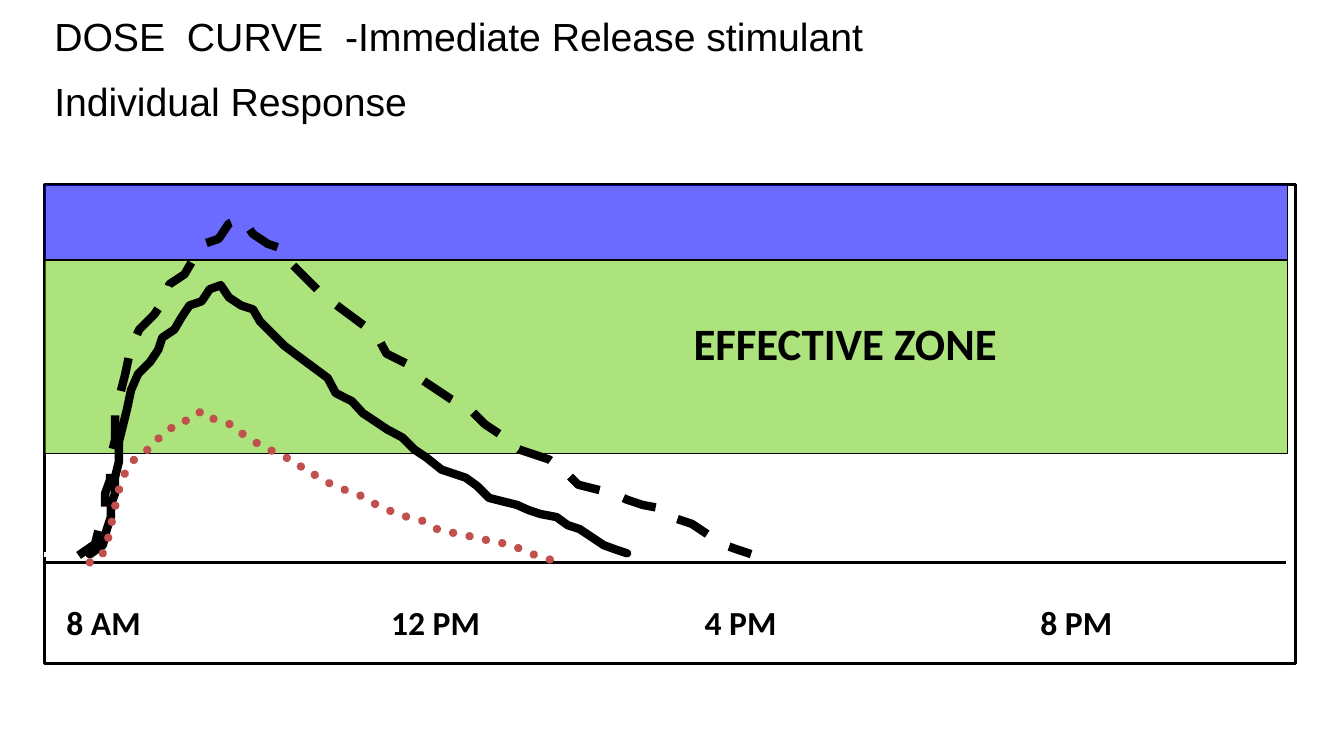
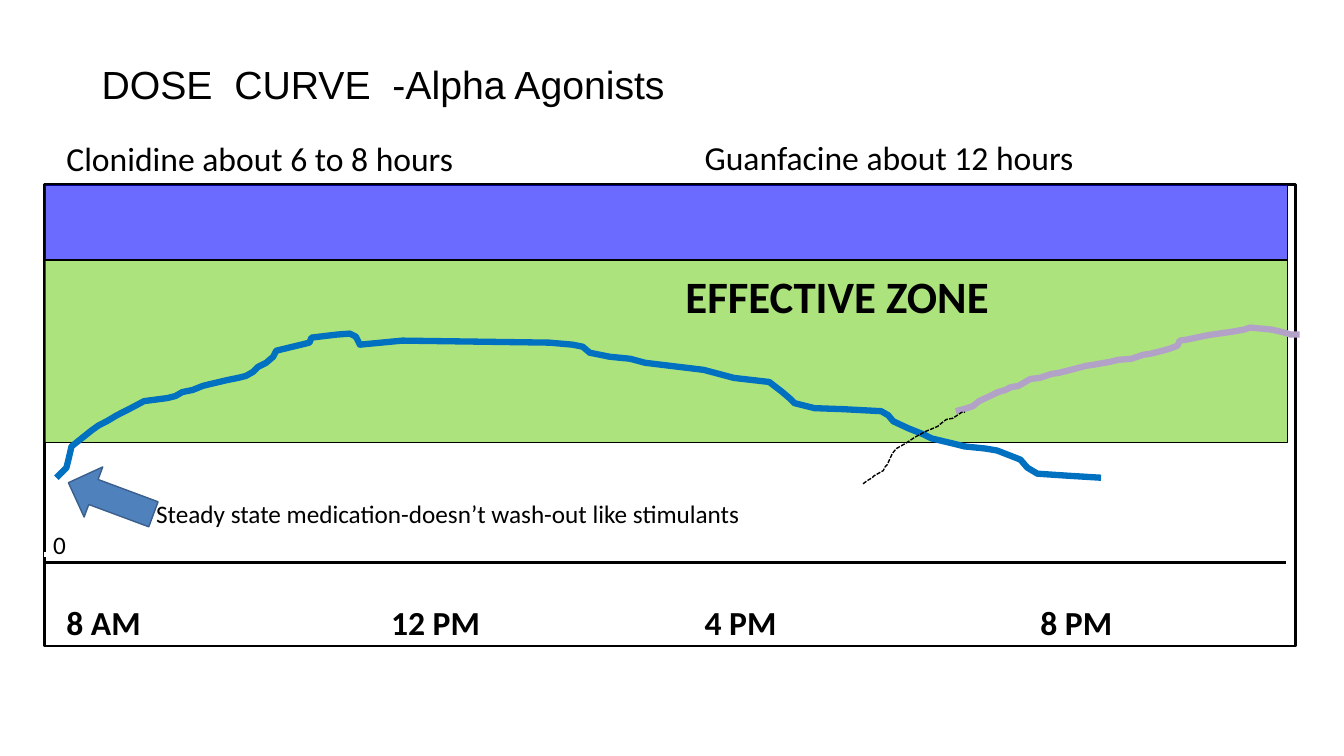
from pptx import Presentation
from pptx.dml.color import RGBColor
from pptx.enum.dml import MSO_LINE
from pptx.enum.shapes import MSO_CONNECTOR, MSO_SHAPE
from pptx.enum.text import MSO_ANCHOR
from pptx.oxml.ns import qn
from pptx.util import Pt
from lxml.etree import SubElement

PX = 9144
COLORS = {
    "ink": "000000",
    "paper": "FFFFFF",
    "high": "0000FF",
    "zone": "60C900",
    "low": "C0504D",
    "cloni": "0070C0",
    "guan": "B3A2C7",
    "arrow": "4F81BD",
    "edge": "3A5F8C",
}
HOURS = [(12, "8 AM", 94), (334, "12 PM", 109), (645, "4 PM", 92), (978, "8 PM", 92)]

DOSE = [
    (0, 267), (13, 258), (17, 242), (21, 230), (21, 218), (25, 207), (25, 191),
    (29, 175), (29, 155), (33, 139), (37, 123), (41, 104), (48, 88), (60, 76),
    (68, 64), (72, 52), (84, 44), (91, 32), (99, 20), (111, 16), (119, 4),
    (130, 0), (138, 12), (150, 20), (162, 24), (169, 36), (181, 48), (193, 60),
    (209, 72), (236, 92), (244, 107), (260, 115), (271, 127), (283, 135),
    (295, 143), (310, 151), (322, 163), (334, 171), (349, 183), (361, 187),
    (373, 191), (384, 199), (396, 211), (412, 215), (424, 218), (435, 223),
    (447, 227), (463, 230), (474, 238), (486, 242), (498, 250), (510, 258),
    (521, 262), (533, 266),
]
CLONI = [
    (0, 143), (10, 133), (12, 125), (15, 112), (35, 96), (42, 91), (50, 87),
    (60, 81), (72, 75), (87, 67), (110, 64), (118, 62), (125, 58), (135, 56),
    (145, 52), (153, 50), (170, 46), (180, 44), (188, 42), (195, 38), (200, 33),
    (208, 29), (215, 23), (218, 17), (251, 9), (253, 4), (278, 1), (291, 0),
    (297, 3), (301, 11), (343, 7), (489, 9), (512, 11), (522, 13), (529, 19),
    (549, 23), (569, 25), (584, 29), (642, 36), (672, 44), (707, 48), (720, 58),
    (727, 64), (732, 69), (752, 74), (780, 75), (818, 77), (825, 81), (830, 87),
    (845, 94), (860, 100), (868, 104), (893, 110), (901, 112), (921, 114),
    (933, 116), (956, 125), (963, 133), (973, 139), (1003, 141), (1036, 143),
]
GUAN = [
    (0, 83), (11, 80), (17, 78), (23, 73), (36, 67), (42, 64), (49, 62), (55, 59),
    (62, 58), (74, 51), (83, 50), (95, 46), (102, 45), (110, 43), (129, 38),
    (136, 37), (153, 34), (161, 32), (174, 31), (186, 27), (193, 26), (205, 23),
    (212, 21), (220, 18), (222, 13), (229, 12), (248, 8), (254, 7), (275, 4),
    (286, 2), (292, 0), (313, 2), (326, 5), (332, 7), (341, 7),
]
LEAD = [
    (0, 71), (4, 68), (9, 65), (11, 63), (20, 58), (22, 54), (24, 52), (29, 41),
    (33, 36), (42, 31), (51, 25), (62, 19), (67, 17), (74, 14), (80, 9), (83, 7),
    (89, 6), (98, 0), (101, 0),
]


def scale(box):
    return [n * PX for n in box]


def tint(name):
    return RGBColor.from_string(COLORS[name])


def stroke(line, name, width):
    line.color.rgb = tint(name)
    line.width = Pt(width)


def block(slide, kind, box, fill=None, alpha=100, edge="ink", width=1):
    shape = slide.shapes.add_shape(kind, *scale(box))
    shape.shadow.inherit = False
    if fill:
        shape.fill.solid()
        shape.fill.fore_color.rgb = tint(fill)
        if alpha < 100:
            color = shape.element.spPr.find(qn("a:solidFill"))[0]
            SubElement(color, qn("a:alpha")).set("val", str(alpha * 1000))
    else:
        shape.fill.background()
    stroke(shape.line, edge, width)
    return shape


def rule(slide, ends, name, width):
    line = slide.shapes.add_connector(MSO_CONNECTOR.STRAIGHT, *scale(ends))
    stroke(line.line, name, width)
    SubElement(line.element.spPr, qn("a:effectLst"))


def write(slide, box, text, size, font="Calibri", bold=False, wrap=False):
    frame = slide.shapes.add_textbox(*scale(box)).text_frame
    frame.word_wrap = wrap
    frame.text = text
    for para in frame.paragraphs:
        para.font.name = font
        para.font.size = Pt(size)
        para.font.bold = bold
        para.font.color.rgb = tint("ink")
    return frame


def title(slide, box, text):
    frame = write(slide, box, text, 28, "Arial", wrap=True)
    frame.vertical_anchor = MSO_ANCHOR.MIDDLE
    for i, para in enumerate(frame.paragraphs):
        para.line_spacing = 0.9
        if i:
            para.space_before = Pt(16)


def trace(slide, box, points, name, width, dash=None, cap="flat"):
    left, top, wide, high = scale(box)
    far = max(x for x, y in points)
    deep = max(y for x, y in points)
    spots = [(round(left + x * wide / far), round(top + y * high / deep)) for x, y in points]
    pen = slide.shapes.build_freeform(*spots[0], scale=1.0)
    pen.add_line_segments(spots[1:], close=False)
    curve = pen.convert_to_shape()
    curve.shadow.inherit = False
    curve.fill.background()
    stroke(curve.line, name, width)
    if dash:
        curve.line.dash_style = dash
    curve.element.spPr.find(qn("a:ln")).set("cap", cap)


def chart(slide, box, depth, label):
    left, top, wide, high = box
    block(slide, MSO_SHAPE.RECTANGLE, box, width=2)
    rule(slide, (left, top + 375, left + wide - 10, top + 375), "ink", 2)
    block(slide, MSO_SHAPE.RECTANGLE, (left, top + 75, wide - 8, depth), "zone", 51)
    rule(slide, (left, top + 367, left + wide - 4, top + 367), "paper", 4)
    block(slide, MSO_SHAPE.RECTANGLE, (left, top, wide - 8, 75), "high", 58)
    x, y = label
    write(slide, (left + x, top + y, 325, 64), "EFFECTIVE ZONE", 32, bold=True)
    for x, hour, span in HOURS:
        write(slide, (left + x, top + 409, span, 50), hour, 24, bold=True)


def release(slide, box):
    left, top = box[:2]
    title(slide, (left, 8, 1167, 125), "DOSE  CURVE  -Immediate Release stimulant\nIndividual Response")
    chart(slide, box, 192, (634, 125))
    trace(slide, (left + 45, top + 100, 533, 267), DOSE, "ink", 6, cap="rnd")
    trace(slide, (left + 45, top + 225, 467, 150), DOSE, "low", 6, MSO_LINE.ROUND_DOT, "rnd")
    trace(slide, (left + 34, top + 34, 667, 334), DOSE, "ink", 6, MSO_LINE.DASH)


def agonist(slide, box):
    left, top = box[:2]
    title(slide, (left + 47, 40, 1167, 92), "DOSE  CURVE  -Alpha Agonists")
    chart(slide, box, 181, (626, 79))
    trace(slide, (left + 12, top + 148, 1036, 143), CLONI, "cloni", 4.5)
    trace(slide, (left + 904, top + 142, 341, 83), GUAN, "guan", 4.5)
    trace(slide, (left + 812, top + 226, 101, 71), LEAD, "ink", 1, MSO_LINE.SQUARE_DOT)
    arrow = block(slide, MSO_SHAPE.RIGHT_ARROW, (left + 21, top + 285, 90, 53), "arrow", edge="edge")
    arrow.rotation = 200.4
    for x, y, wide, high, text, size in [
        (12, -51, 409, 50, "Clonidine about 6 to 8 hours", 24),
        (645, -52, 391, 50, "Guanfacine about 12 hours", 24),
        (101, 306, 608, 40, "Steady state medication-doesn’t wash-out like stimulants", 18),
        (-1, 337, 33, 40, "0", 18),
    ]:
        write(slide, (left + x, top + y, wide, high), text, size)


def main():
    deck = Presentation()
    deck.slide_width, deck.slide_height = scale((1333, 750))
    for draw, high in [(release, 475), (agonist, 458)]:
        draw(deck.slides.add_slide(deck.slide_layouts[6]), (44, 183, 1241, high))
    deck.save("out.pptx")


if __name__ == "__main__":
    main()
